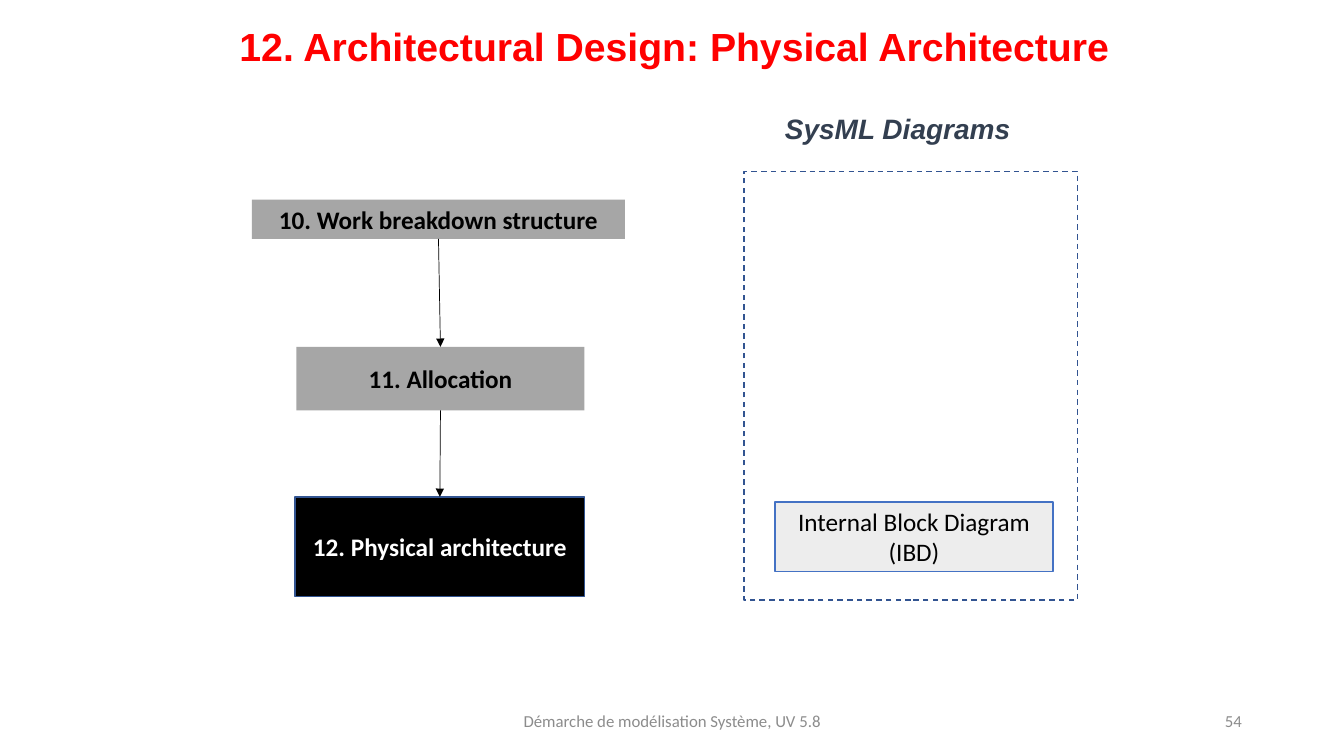
from dataclasses import dataclass
from typing import Optional

import pptx
import pptx.dml.color
import pptx.enum.dml
import pptx.enum.shapes
import pptx.enum.text
import pptx.oxml
import pptx.oxml.ns
import pptx.util
from pptx.dml.color import RGBColor
from pptx.util import Cm

BLACK = RGBColor(0x00, 0x00, 0x00)
WHITE = RGBColor(0xFF, 0xFF, 0xFF)
RED = RGBColor(0xFF, 0x00, 0x00)
GREY = RGBColor(0xA6, 0xA6, 0xA6)
LIGHT_GREY = RGBColor(0xED, 0xED, 0xED)
FOOTER_GREY = RGBColor(0x8C, 0x8C, 0x8C)
SLATE = RGBColor(0x33, 0x3F, 0x50)
BLUE = RGBColor(0x44, 0x72, 0xC4)
DARK_BLUE = RGBColor(0x32, 0x54, 0x91)

ALIGN = pptx.enum.text.PP_ALIGN
ANCHOR = pptx.enum.text.MSO_ANCHOR


@dataclass(frozen=True)
class Area:
    left: float
    top: float
    width: float
    height: float

    def lengths(self) -> tuple:
        return Cm(self.left), Cm(self.top), Cm(self.width), Cm(self.height)


@dataclass(frozen=True)
class Style:
    size: float
    color: RGBColor
    font: str = "Calibri"
    bold: bool = False
    italic: bool = False
    align: ALIGN = ALIGN.CENTER
    anchor: ANCHOR = ANCHOR.MIDDLE
    line_spacing: Optional[float] = None


@dataclass(frozen=True)
class Label:
    text: str
    area: Area
    style: Style


@dataclass(frozen=True)
class Box:
    area: Area
    text: str = ""
    style: Optional[Style] = None
    fill: Optional[RGBColor] = None
    line: Optional[RGBColor] = None
    dashed: bool = False


STEP_STYLE = Style(18, BLACK, bold=True)

LABELS = [
    Label("12. Architectural Design: Physical Architecture", Area(4.72, 0.08, 24.54, 1.55),
          Style(28, RED, "Arial", bold=True, line_spacing=1.5)),
    Label("SysML Diagrams", Area(19.53, 2.69, 7.26, 1.12),
          Style(20, SLATE, "Arial", bold=True, italic=True, align=ALIGN.LEFT, anchor=ANCHOR.TOP)),
    Label("Démarche de modélisation Système, UV 5.8", Area(11.23, 17.65, 11.43, 1.02),
          Style(12, FOOTER_GREY)),
    Label("54", Area(23.93, 17.65, 7.62, 1.02), Style(12, FOOTER_GREY, align=ALIGN.RIGHT)),
]

DIAGRAM_BOXES = [
    Box(Area(19.53, 12.65, 7.01, 1.75), "Internal Block Diagram (IBD)",
        Style(18, BLACK), LIGHT_GREY, BLUE),
    Box(Area(18.75, 4.32, 8.41, 10.8), line=DARK_BLUE, dashed=True),
]

STEPS = [
    Box(Area(6.35, 5.03, 9.4, 0.99), "10. Work breakdown structure", STEP_STYLE, GREY),
    Box(Area(7.47, 8.74, 7.26, 1.6), "11. Allocation", STEP_STYLE, GREY),
    Box(Area(7.44, 12.52, 7.29, 2.51), "12. Physical architecture",
        Style(18, WHITE, bold=True), BLACK, DARK_BLUE),
]


def write_text(shape, text: str, style: Style) -> None:
    frame = shape.text_frame
    frame.word_wrap = True
    frame.vertical_anchor = style.anchor
    paragraph = frame.paragraphs[0]
    paragraph.text = text
    paragraph.alignment = style.align
    if style.line_spacing:
        paragraph.line_spacing = style.line_spacing
    font = paragraph.font
    font.name = style.font
    font.size = pptx.util.Pt(style.size)
    font.bold = style.bold
    font.italic = style.italic
    font.color.rgb = style.color


def add_label(slide, label: Label) -> None:
    write_text(slide.shapes.add_textbox(*label.area.lengths()), label.text, label.style)


def add_box(slide, box: Box):
    shape = slide.shapes.add_shape(pptx.enum.shapes.MSO_SHAPE.RECTANGLE, *box.area.lengths())
    shape.shadow.inherit = False
    if box.fill is None:
        shape.fill.background()
    else:
        shape.fill.solid()
        shape.fill.fore_color.rgb = box.fill
    if box.line is None:
        shape.line.fill.background()
    else:
        shape.line.color.rgb = box.line
        shape.line.width = pptx.util.Pt(1)
    if box.dashed:
        shape.line.dash_style = pptx.enum.dml.MSO_LINE.DASH
    if box.style:
        write_text(shape, box.text, box.style)
    return shape


def add_arrow(slide, upper, lower) -> None:
    connector = slide.shapes.add_connector(pptx.enum.shapes.MSO_CONNECTOR.STRAIGHT, 0, 0, 0, 0)
    connector.begin_connect(upper, 2)
    connector.end_connect(lower, 0)
    connector.line.color.rgb = BLACK
    connector.line.width = pptx.util.Pt(0.5)
    tail = pptx.oxml.parse_xml(
        f'<a:tailEnd {pptx.oxml.ns.nsdecls("a")} type="triangle"/>')
    connector.line._get_or_add_ln().append(tail)
    effects = pptx.oxml.parse_xml(f'<a:effectLst {pptx.oxml.ns.nsdecls("a")}/>')
    connector._element.spPr.append(effects)


def main() -> None:
    presentation = pptx.Presentation()
    presentation.slide_width = Cm(33.87)
    presentation.slide_height = Cm(19.05)
    slide = presentation.slides.add_slide(presentation.slide_layouts[6])
    for label in LABELS:
        add_label(slide, label)
    for box in DIAGRAM_BOXES:
        add_box(slide, box)
    steps = [add_box(slide, step) for step in STEPS]
    for upper, lower in zip(steps, steps[1:]):
        add_arrow(slide, upper, lower)
    presentation.save("out.pptx")


if __name__ == "__main__":
    main()
